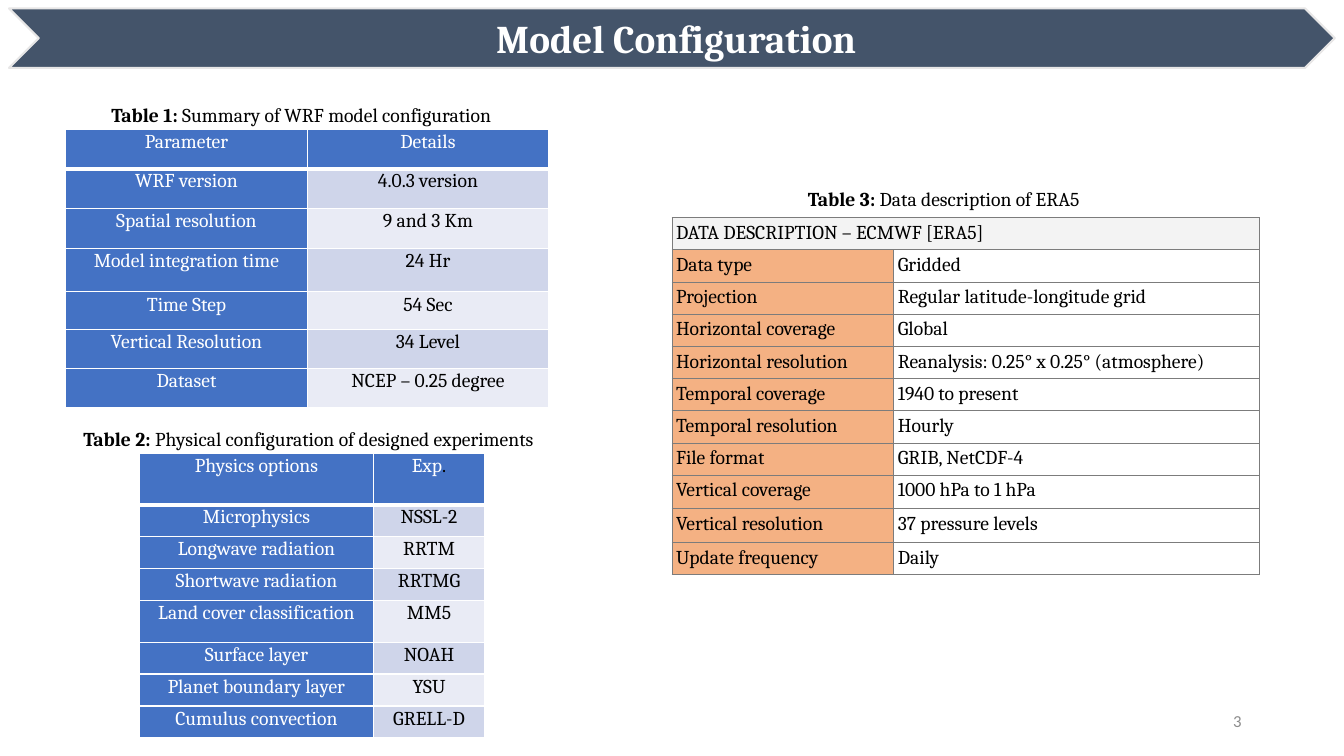
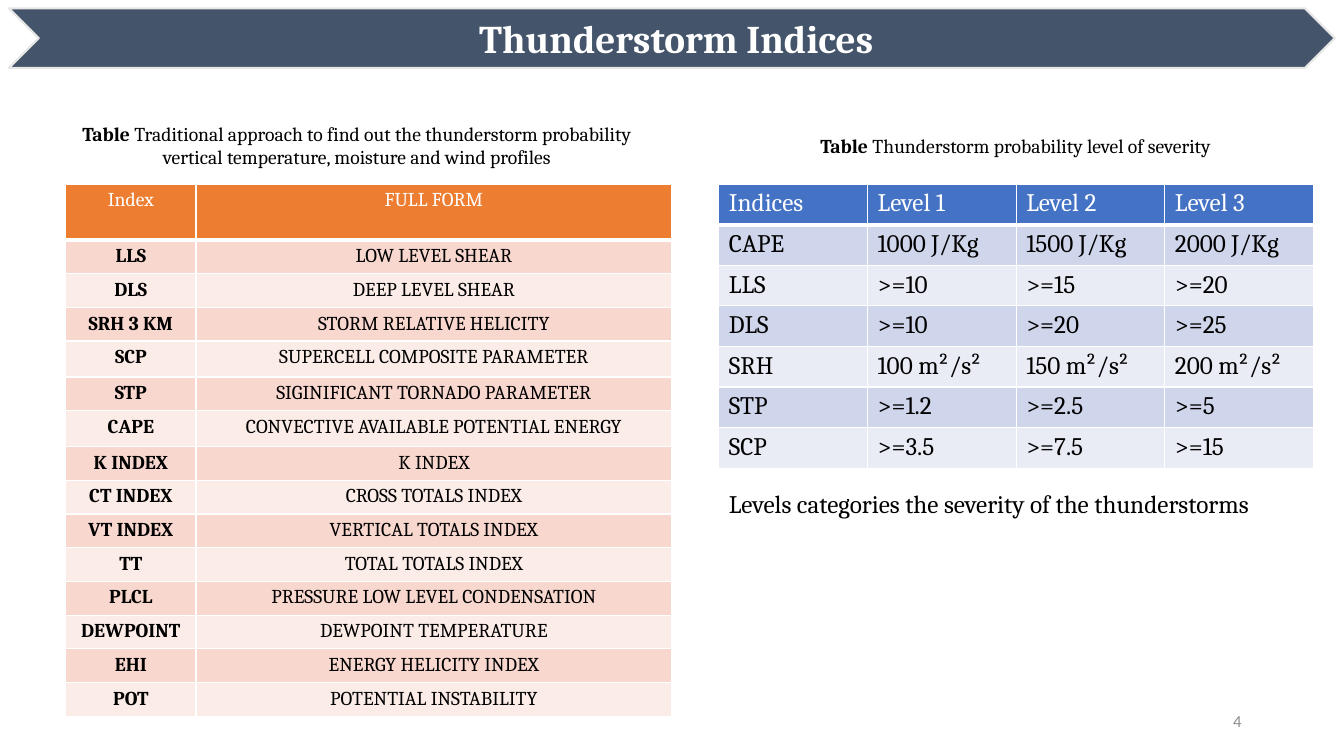
from lxml import etree
from pptx import Presentation
from pptx.dml.color import RGBColor
from pptx.enum.shapes import MSO_SHAPE
from pptx.enum.text import MSO_ANCHOR, MSO_AUTO_SIZE, PP_ALIGN
from pptx.oxml.ns import qn
from pptx.util import Pt

CHEVRON = MSO_SHAPE.CHEVRON
TOP, MIDDLE = MSO_ANCHOR.TOP, MSO_ANCHOR.MIDDLE
NO_FIT, GROW = MSO_AUTO_SIZE.NONE, MSO_AUTO_SIZE.SHAPE_TO_FIT_TEXT
LEFT, CENTER, RIGHT, JUSTIFY = PP_ALIGN.LEFT, PP_ALIGN.CENTER, PP_ALIGN.RIGHT, PP_ALIGN.JUSTIFY

WHITE = RGBColor(0xFF, 0xFF, 0xFF)
BLACK = RGBColor(0x00, 0x00, 0x00)
SLATE = RGBColor(0x44, 0x54, 0x6A)
SILVER = RGBColor(0xE7, 0xE6, 0xE6)
GRAY = RGBColor(0x8C, 0x8C, 0x8C)
RULE = RGBColor(0x7C, 0x7C, 0x7C)
BLUE = RGBColor(0x44, 0x72, 0xC4)
BLUE_MID = RGBColor(0xCF, 0xD5, 0xEA)
BLUE_PALE = RGBColor(0xE9, 0xEB, 0xF5)
ORANGE = RGBColor(0xED, 0x7D, 0x31)
ORANGE_MID = RGBColor(0xF8, 0xD7, 0xCE)
ORANGE_PALE = RGBColor(0xFC, 0xEC, 0xE8)
PEACH = RGBColor(0xF4, 0xB1, 0x83)
MIST = RGBColor(0xF3, 0xF3, 0xF3)

SPACED = {"line_spacing": 1.07, "space_after": Pt(8)}
PLAIN = {
    "head": BLUE, "head_ink": WHITE, "bands": (BLUE_MID, BLUE_PALE),
    "key": None, "key_ink": BLACK, "key_bold": False,
    "border": WHITE, "border_pt": 1, "head_rule_pt": 3,
    "size": 18, "para": {"alignment": LEFT}, "margins": (7.2, 3.6),
}
KEYED = {**PLAIN, "key": BLUE, "key_ink": WHITE, "size": 14,
         "para": {"alignment": CENTER, **SPACED}, "margins": (5, 0)}
WARM = {**PLAIN, "head": ORANGE, "bands": (ORANGE_MID, ORANGE_PALE),
        "key_bold": True, "size": 14, "para": {"alignment": CENTER}}
RULED = {**PLAIN, "head": MIST, "head_ink": BLACK, "bands": (WHITE, WHITE),
         "key": PEACH, "border": RULE, "border_pt": 0.75,
         "head_rule_pt": 0.75, "size": 14, "margins": (2.9, 2.9)}


def assign(obj, values):
    for name, value in values.items():
        setattr(obj, name, value)


class Deck:
    def __init__(self, first_number):
        self.prs = Presentation()
        assign(self.prs, {"slide_width": Pt(960), "slide_height": Pt(540)})
        self.number = first_number - 1
        self.s = None

    def slide(self, title):
        self.s = self.prs.slides.add_slide(self.prs.slide_layouts[5])
        self.number += 1
        self.banner(title)
        self.text(678, 500.5, 216, 29, [(str(self.number), False)], size=12,
                  color=GRAY, font="Calibri", para={"alignment": RIGHT},
                  frame={"vertical_anchor": MIDDLE})

    def banner(self, title):
        sp = self.s.shapes.add_shape(CHEVRON, Pt(6.5), Pt(6), Pt(947), Pt(42.5))
        sp.shadow.inherit = False
        sp.fill.solid()
        sp.fill.fore_color.rgb = SLATE
        sp.line.color.rgb = SILVER
        sp.line.width = Pt(1.5)
        self.s.shapes._spTree.insert(2, sp._element)
        box = self.s.shapes.title
        assign(box, {"left": Pt(28), "top": Pt(6), "width": Pt(904.5), "height": Pt(42.5)})
        assign(box.text_frame, {
            "margin_left": Pt(8.5), "margin_right": Pt(3), "margin_top": Pt(3),
            "margin_bottom": Pt(3), "vertical_anchor": MIDDLE,
            "word_wrap": True, "auto_size": NO_FIT})
        self.add_runs(box.text_frame, [(title, True)], 28, WHITE, {"alignment": CENTER})

    def add_runs(self, tf, runs, size, color, para, font="Cambria"):
        p = tf.paragraphs[0]
        assign(p, para)
        for text, bold, *ink in runs:
            r = p.add_run()
            r.text = text
            assign(r.font, {"name": font, "size": Pt(size), "bold": bold})
            r.font.color.rgb = ink[0] if ink else color

    def text(self, x, y, w, h, runs, size=14, color=BLACK, font="Cambria",
             para=None, frame=None):
        box = self.s.shapes.add_textbox(Pt(x), Pt(y), Pt(w), Pt(h))
        assign(box.text_frame, {"word_wrap": True, "auto_size": GROW,
                                "vertical_anchor": TOP, **(frame or {})})
        self.add_runs(box.text_frame, runs, size, color, para or {}, font)

    def caption(self, x, y, w, h, label, text, para):
        self.text(x, y, w, h, [(label, True), (text, False)], para=para)

    def borders(self, cell, color, widths):
        tc_pr = cell._tc.get_or_add_tcPr()
        for side, width in zip("LRTB", widths):
            ln = etree.SubElement(tc_pr, qn(f"a:ln{side}"), w=str(Pt(width)))
            fill = etree.SubElement(ln, qn("a:solidFill"))
            etree.SubElement(fill, qn("a:srgbClr"), val=str(color))

    def table(self, x, y, widths, heights, rows, style):
        frame = self.s.shapes.add_table(len(rows), len(widths), Pt(x), Pt(y),
                                        Pt(sum(widths)), Pt(sum(heights)))
        tbl = frame.table
        for col, width in zip(tbl.columns, widths):
            col.width = Pt(width)
        for row, height in zip(tbl.rows, heights):
            row.height = Pt(height)
        for i, values in enumerate(rows):
            for j in range(len(widths)):
                self.cell(tbl.cell(i, j), i, j, style)
            for j, value in enumerate(values):
                self.cell_text(tbl.cell(i, j), i, j, value, style)
            if len(values) < len(widths):
                tbl.cell(i, len(values) - 1).merge(tbl.cell(i, len(widths) - 1))

    def cell(self, cell, i, j, style):
        side, edge = (Pt(m) for m in style["margins"])
        assign(cell, {"margin_left": side, "margin_right": side,
                      "margin_top": edge, "margin_bottom": edge})
        thin = style["border_pt"]
        bottom = thin if i else style["head_rule_pt"]
        self.borders(cell, style["border"], (thin, thin, thin, bottom))
        fill = style["bands"][(i - 1) % 2]
        if i == 0:
            fill = style["head"]
        elif j == 0 and style["key"]:
            fill = style["key"]
        cell.fill.solid()
        cell.fill.fore_color.rgb = fill

    def cell_text(self, cell, i, j, value, style):
        is_key = i > 0 and j == 0
        ink = style["key_ink"] if is_key else BLACK if i else style["head_ink"]
        bold = is_key and style["key_bold"]
        runs = [(value, bold)] if isinstance(value, str) else value
        self.add_runs(cell.text_frame, runs, style["size"], ink, style["para"])


MODEL = [
    ("Parameter", "Details"),
    ("WRF version", "4.0.3 version"),
    ("Spatial resolution", "9 and 3 Km"),
    ("Model integration time", "24 Hr"),
    ("Time Step", "54 Sec"),
    ("Vertical Resolution", "34 Level"),
    ("Dataset", "NCEP – 0.25 degree"),
]
PHYSICS = [
    ("Physics options", [("Exp", False), (".", False, BLACK)]),
    ("Microphysics", "NSSL-2"),
    ("Longwave radiation", "RRTM"),
    ("Shortwave radiation", "RRTMG"),
    ("Land cover classification", "MM5"),
    ("Surface layer", "NOAH"),
    ("Planet boundary layer", "YSU"),
    ("Cumulus convection", "GRELL-D"),
]
REANALYSIS = [
    ("DATA DESCRIPTION – ECMWF [ERA5]",),
    ("Data type", "Gridded"),
    ("Projection", "Regular latitude-longitude grid"),
    ("Horizontal coverage", "Global"),
    ("Horizontal resolution", "Reanalysis: 0.25° x 0.25° (atmosphere)"),
    ("Temporal coverage", "1940 to present"),
    ("Temporal resolution", "Hourly"),
    ("File format", "GRIB, NetCDF-4"),
    ("Vertical coverage", "1000 hPa to 1 hPa"),
    ("Vertical resolution", "37 pressure levels"),
    ("Update frequency", "Daily"),
]
INDICES = [
    ("Index", "FULL FORM"),
    ("LLS", "LOW LEVEL SHEAR"),
    ("DLS", "DEEP LEVEL SHEAR"),
    ("SRH 3 KM", "STORM RELATIVE HELICITY"),
    ("SCP", "SUPERCELL COMPOSITE PARAMETER"),
    ("STP", "SIGINIFICANT TORNADO PARAMETER"),
    ("CAPE", "CONVECTIVE AVAILABLE POTENTIAL ENERGY"),
    ("K INDEX", "K INDEX"),
    ("CT INDEX", "CROSS TOTALS INDEX"),
    ("VT INDEX", "VERTICAL TOTALS INDEX"),
    ("TT", "TOTAL TOTALS INDEX"),
    ("PLCL", "PRESSURE LOW LEVEL CONDENSATION"),
    ("DEWPOINT", "DEWPOINT TEMPERATURE"),
    ("EHI", "ENERGY HELICITY INDEX"),
    ("POT", "POTENTIAL INSTABILITY"),
]
SEVERITY = [
    ("Indices", "Level 1", "Level 2", "Level 3"),
    ("CAPE", "1000 J/Kg", "1500 J/Kg", "2000 J/Kg"),
    ("LLS", ">=10", ">=15", ">=20"),
    ("DLS", ">=10", ">=20", ">=25"),
    ("SRH", "100 m²/s²", "150 m²/s²", "200 m²/s²"),
    ("STP", ">=1.2", ">=2.5", ">=5"),
    ("SCP", ">=3.5", ">=7.5", ">=15"),
]


def main():
    deck = Deck(first_number=3)

    deck.slide("Model Configuration")
    deck.table(47, 92.5, [172.5] * 2, [28, 28.5, 28.5, 31, 27, 28, 28], MODEL, KEYED)
    deck.caption(72.5, 68.5, 300, 24, "Table 1:", " Summary of WRF model configuration",
                 {"alignment": LEFT, **SPACED})
    deck.table(99.5, 324, [167.5, 79], [36.5] + [22.8] * 3 + [29.8] + [22.8] * 3,
               PHYSICS, KEYED)
    deck.caption(52.5, 300.5, 354, 24, "Table 2:",
                 " Physical configuration of designed experiments",
                 {"alignment": JUSTIFY, **SPACED})
    deck.table(480, 155.5, [158.5, 261], [23] * 8 + [24] * 2 + [23], REANALYSIS, RULED)
    deck.caption(570, 129, 239, 24, "Table 3: ", "Data description of ERA5",
                 {"alignment": JUSTIFY, **SPACED})

    deck.slide("Thunderstorm Indices")
    deck.table(47, 131.5, [93, 340],
               [40] + [23.3] * 3 + [25.7, 23.3, 25.7] + [23.3] * 4 + [24.3] + [23.3] * 3,
               INDICES, WARM)
    deck.caption(30, 83.5, 450, 41, "Table ",
                 "Traditional approach to find out the thunderstorm probability "
                 "vertical temperature, moisture and wind profiles", {"alignment": CENTER})
    deck.table(513.5, 131.5, [106.2] * 4, [29] * 7, SEVERITY, PLAIN)
    deck.caption(500.5, 92, 450, 24.5, "Table ",
                 "Thunderstorm probability level of severity", {"alignment": CENTER})
    deck.text(513.5, 345, 427.5, 29,
              [("Levels categories the severity of the thunderstorms", False)],
              size=18, para={"alignment": JUSTIFY})

    deck.prs.save("out.pptx")


if __name__ == "__main__":
    main()
